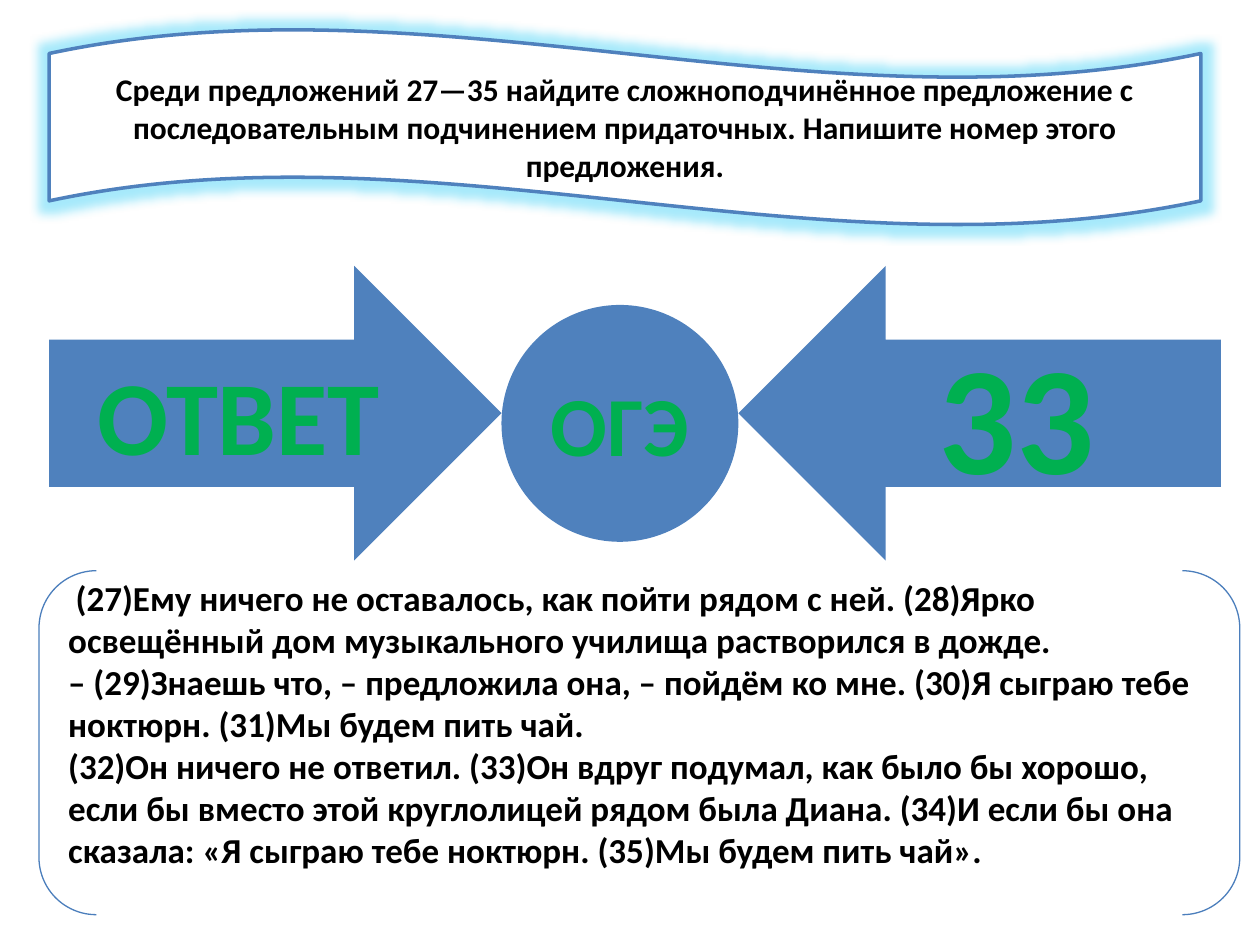
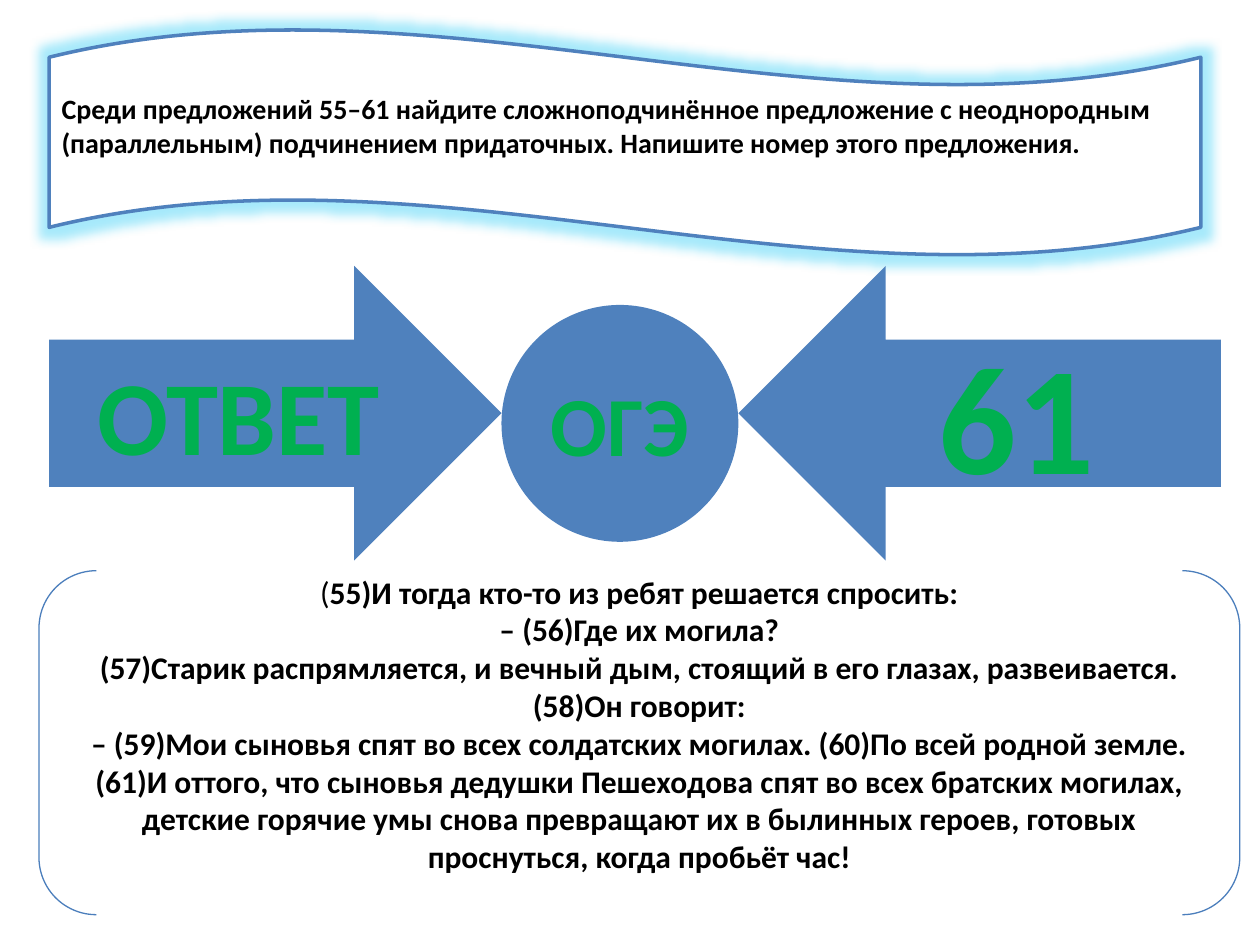
from lxml import etree
from pptx import Presentation
from pptx.dml.color import RGBColor
from pptx.enum.shapes import MSO_SHAPE
from pptx.enum.text import MSO_ANCHOR, PP_ALIGN
from pptx.oxml.ns import qn
from pptx.util import Pt

PX = 9144  # 100 px to the inch
BLUE = RGBColor(0x4F, 0x81, 0xBD)
EDGE = RGBColor(0x4B, 0x7E, 0xBC)
GREEN = RGBColor(0x00, 0xB0, 0x50)
BLACK = RGBColor(0, 0, 0)
WHITE = RGBColor(255, 255, 255)
GLOW = RGBColor(0x25, 0xCA, 0xF5)
FONT = "Calibri"
LEFT, CENTER = PP_ALIGN.LEFT, PP_ALIGN.CENTER
MIDDLE = MSO_ANCHOR.MIDDLE
WAVE, BRACKETS = MSO_SHAPE.WAVE, MSO_SHAPE.DOUBLE_BRACKET
RIGHT_ARROW, LEFT_ARROW = MSO_SHAPE.RIGHT_ARROW, MSO_SHAPE.LEFT_ARROW
OVAL = MSO_SHAPE.OVAL

# Content: one entry per slide
TASKS = [
    {
        "task": "Среди предложений 27—35 найдите сложноподчинённое предложение "
                "с последовательным подчинением придаточных. "
                "Напишите номер этого предложения.",
        "wave": (156, 18, CENTER, 5),  # height, size, alignment, bottom inset
        "answer": "33",
        "body": (20, LEFT, 6),  # size, alignment, first indent
        "plain": "",  # opening text that is not bold
        "lines": [
            "(27)Ему ничего не оставалось, как пойти рядом с ней. "
            "(28)Ярко освещённый дом музыкального училища растворился в дожде.",
            "– (29)Знаешь что, – предложила она, – пойдём ко мне. "
            "(30)Я сыграю тебе ноктюрн. (31)Мы будем пить чай.",
            "(32)Он ничего не ответил. (33)Он вдруг подумал, как было бы хорошо, "
            "если бы вместо этой круглолицей рядом была Диана. (34)И если бы она "
            "сказала: «Я сыграю тебе ноктюрн. (35)Мы будем пить чай».",
        ],
    },
    {
        "task": "Среди предложений 55–61 найдите сложноподчинённое предложение "
                "с неоднородным (параллельным) подчинением придаточных. "
                "Напишите номер этого предложения.",
        "wave": (180, 16, LEFT, 32),
        "answer": "61",
        "body": (18, CENTER, 0),
        "plain": "(",
        "lines": [
            "55)И тогда кто-то из ребят решается спросить:",
            "– (56)Где их могила?",
            "(57)Старик распрямляется, и вечный дым, стоящий в его глазах, "
            "развеивается. (58)Он говорит:",
            "– (59)Мои сыновья спят во всех солдатских могилах. "
            "(60)По всей родной земле.",
            "(61)И оттого, что сыновья дедушки Пешеходова спят во всех братских "
            "могилах, детские горячие умы снова превращают их в былинных героев, "
            "готовых проснуться, когда пробьёт час!",
        ],
    },
]


def add_box(slide, kind, place, fill=None, edge=None, width=0):
    box = slide.shapes.add_shape(kind, *[n * PX for n in place])
    box.shadow.inherit = False
    if fill is None:
        box.fill.background()
    else:
        box.fill.solid()
        box.fill.fore_color.rgb = fill
    if edge is None:
        box.line.fill.background()
    else:
        box.line.color.rgb = edge
        box.line.width = Pt(width)
    return box


def add_text(box, lines, size, color, align=CENTER, bottom=5, plain=""):
    frame = box.text_frame
    frame.word_wrap = True
    frame.vertical_anchor = MIDDLE
    frame.margin_bottom = bottom * PX
    for i, line in enumerate(lines):
        para = frame.paragraphs[0] if i == 0 else frame.add_paragraph()
        para.alignment = align
        if i == 0 and plain:
            run = para.add_run()
            run.text = plain
            run.font.bold = False
        para.add_run().text = line
        font = para.font
        font.name, font.size, font.bold = FONT, Pt(size), True
        font.color.rgb = color


deck = Presentation()
deck.slide_width, deck.slide_height = 1000 * PX, 750 * PX
blank = deck.slide_layouts[6]

for task in TASKS:
    slide = deck.slides.add_slide(blank)

    # Glowing wave with the question
    high, size, align, bottom = task["wave"]
    wave = add_box(slide, WAVE, (39, 23, 914, high), WHITE, BLUE, 2)
    wave.adjustments[0] = 0.125
    effects = wave._element.spPr.find(qn("a:effectLst"))
    glow = etree.SubElement(effects, qn("a:glow"), rad=str(15 * PX))
    tint = etree.SubElement(glow, qn("a:srgbClr"), val=str(GLOW))
    etree.SubElement(tint, qn("a:alpha"), val="40000")
    add_text(wave, [task["task"]], size, BLACK, align, bottom)

    # Arrows pointing at the circle
    for kind, place, word, size in [
        (RIGHT_ARROW, (39, 211, 359, 234), "ОТВЕТ", 60),
        (LEFT_ARROW, (586, 211, 383, 234), task["answer"], 88),
        (OVAL, (398, 242, 188, 188), "ОГЭ", 48),
    ]:
        add_text(add_box(slide, kind, place, BLUE), [word], size, GREEN)

    # Passage in brackets
    size, align, indent = task["body"]
    passage = add_box(slide, BRACKETS, (31, 453, 953, 273), None, EDGE, 0.75)
    add_text(passage, task["lines"], size, BLACK, align, 35, task["plain"])
    first = passage.text_frame.paragraphs[0]
    first._p.get_or_add_pPr().set("indent", str(indent * PX))

deck.save("out.pptx")
